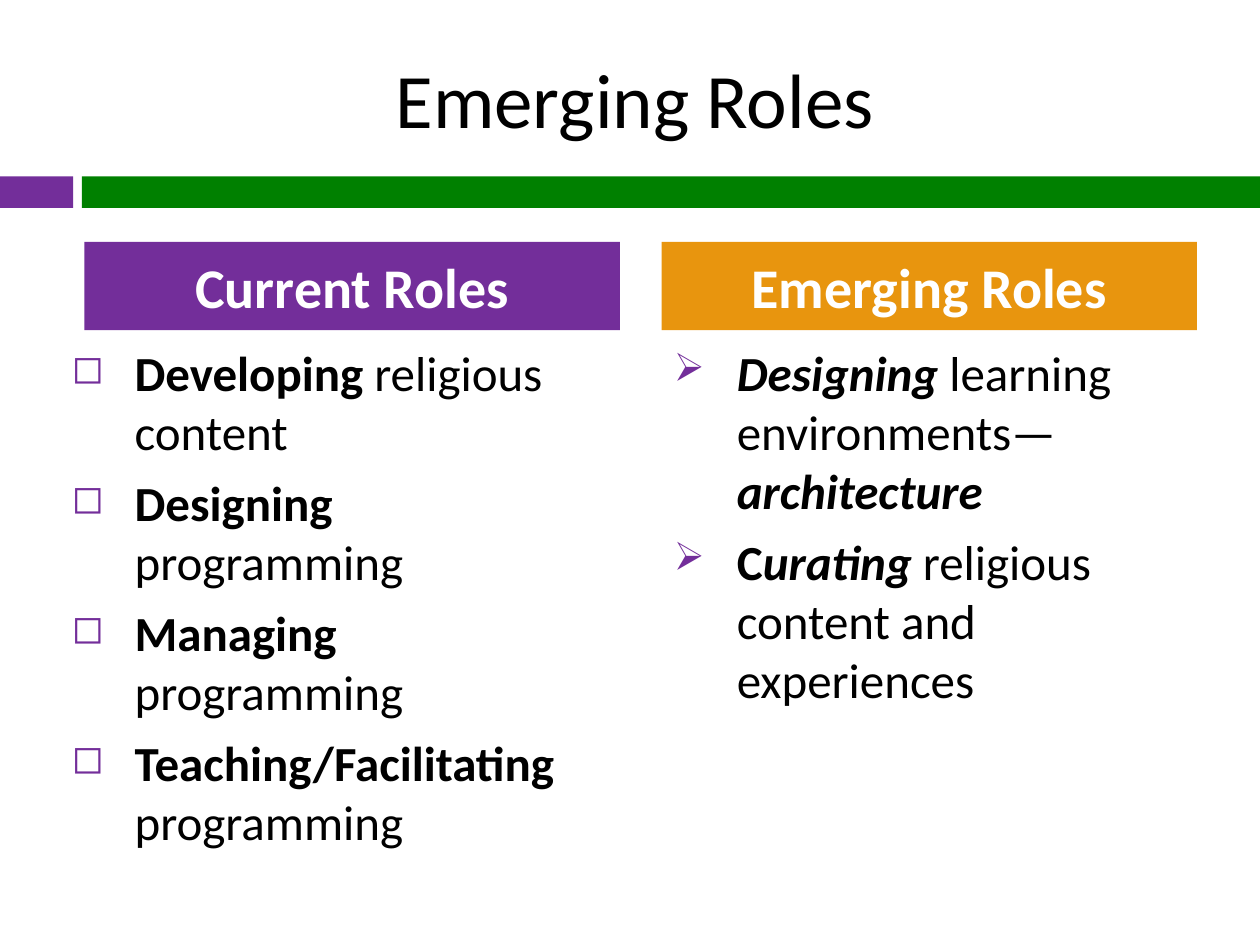
from dataclasses import dataclass

from lxml import etree
from pptx import Presentation
from pptx.dml.color import RGBColor
from pptx.enum.shapes import MSO_SHAPE
from pptx.enum.text import MSO_ANCHOR, PP_ALIGN
from pptx.oxml.ns import qn
from pptx.util import Emu, Inches, Pt

RECTANGLE = MSO_SHAPE.RECTANGLE
MIDDLE, TOP = MSO_ANCHOR.MIDDLE, MSO_ANCHOR.TOP
CENTER, LEFT = PP_ALIGN.CENTER, PP_ALIGN.LEFT

COLORS = {"purple": "732E9A", "green": "008000", "orange": "E8950E",
          "white": "FFFFFF", "black": "000000"}
FONT = "Calibri"
SLIDE_WIDTH, SLIDE_HEIGHT = 10, 7.5
SPACE_BEFORE = Pt(7)
INDENT = Inches(0.5)

BAND_TOP, BAND_HEIGHT = 1.4, 0.25
HEADER_TOP, HEADER_HEIGHT = 1.92, 0.7
LIST_TOP, LIST_HEIGHT = 2.67, 4.46
COLUMN_WIDTH = 4.25


@dataclass
class Run:
    text: str
    bold: bool = False
    italic: bool = False


@dataclass
class RoleColumn:
    heading: str
    color: str
    left: float
    list_left: float
    list_width: float
    bullet: str
    items: list[list[Run]]


COLUMNS = [
    RoleColumn("Current Roles", "purple", 0.67, 0.47, 4.42, "◻", [
        [Run("Developing", True), Run(" religious content")],
        [Run("Designing", True), Run(" programming")],
        [Run("Managing ", True), Run("programming")],
        [Run("Teaching/Facilitating", True), Run(" programming")],
    ]),
    RoleColumn("Emerging Roles", "orange", 5.25, 5.25, COLUMN_WIDTH, "➢", [
        [Run("Designing ", True, True), Run("learning environments—"),
         Run("architecture", True, True)],
        [Run("C", True), Run("urating", True, True),
         Run(" religious content and experiences")],
    ]),
]


def inches(*lengths: float) -> list[Emu]:
    return [Inches(length) for length in lengths]


def style_paragraph(paragraph, size: int, color: str, alignment) -> None:
    paragraph.alignment = alignment
    paragraph.font.name = FONT
    paragraph.font.size = Pt(size)
    paragraph.font.color.rgb = RGBColor.from_string(COLORS[color])


def add_block(slide, color: str, left: float, top: float, width: float, height: float):
    shape = slide.shapes.add_shape(RECTANGLE, *inches(left, top, width, height))
    shape.shadow.inherit = False
    shape.fill.solid()
    shape.fill.fore_color.rgb = RGBColor.from_string(COLORS[color])
    shape.line.fill.background()
    return shape


def add_bullet(paragraph, character: str) -> None:
    """Give the paragraph a hanging purple bullet at 80 % of the text size."""
    properties = paragraph._p.get_or_add_pPr()
    properties.set("marL", str(INDENT))
    properties.set("indent", str(-INDENT))
    bullet_color = etree.SubElement(properties, qn("a:buClr"))
    etree.SubElement(bullet_color, qn("a:srgbClr"), val=COLORS["purple"])
    etree.SubElement(properties, qn("a:buSzPct"), val="80000")
    etree.SubElement(properties, qn("a:buChar"), char=character)


def add_title(slide, text: str) -> None:
    title = slide.shapes.title
    title.left, title.top, title.width, title.height = inches(0.58, 0.3, 8.92, 0.95)
    title.text_frame.text = text
    title.text_frame.vertical_anchor = MIDDLE
    style_paragraph(title.text_frame.paragraphs[0], 44, "black", CENTER)


def add_header(slide, column: RoleColumn) -> None:
    header = add_block(slide, column.color, column.left, HEADER_TOP,
                       COLUMN_WIDTH, HEADER_HEIGHT)
    header.text_frame.vertical_anchor = MIDDLE
    paragraph = header.text_frame.paragraphs[0]
    paragraph.text = column.heading
    paragraph.space_before = SPACE_BEFORE
    style_paragraph(paragraph, 32, "white", CENTER)
    paragraph.font.bold = True


def add_role_list(slide, column: RoleColumn) -> None:
    box = slide.shapes.add_textbox(
        *inches(column.list_left, LIST_TOP, column.list_width, LIST_HEIGHT))
    frame = box.text_frame
    frame.word_wrap = True
    frame.vertical_anchor = TOP
    for index, item in enumerate(column.items):
        paragraph = frame.add_paragraph() if index else frame.paragraphs[0]
        paragraph.space_before = SPACE_BEFORE
        add_bullet(paragraph, column.bullet)
        style_paragraph(paragraph, 28, "black", LEFT)
        for part in item:
            run = paragraph.add_run()
            run.text = part.text
            run.font.bold = part.bold
            run.font.italic = part.italic


def main() -> None:
    presentation = Presentation()
    presentation.slide_width, presentation.slide_height = inches(SLIDE_WIDTH, SLIDE_HEIGHT)
    slide = presentation.slides.add_slide(presentation.slide_layouts[5])
    add_title(slide, "Emerging Roles")
    for color, left, right in [("purple", 0, 0.58), ("green", 0.65, SLIDE_WIDTH)]:
        add_block(slide, color, left, BAND_TOP, right - left, BAND_HEIGHT)
    for column in COLUMNS:
        add_header(slide, column)
        add_role_list(slide, column)
    presentation.save("out.pptx")


if __name__ == "__main__":
    main()
